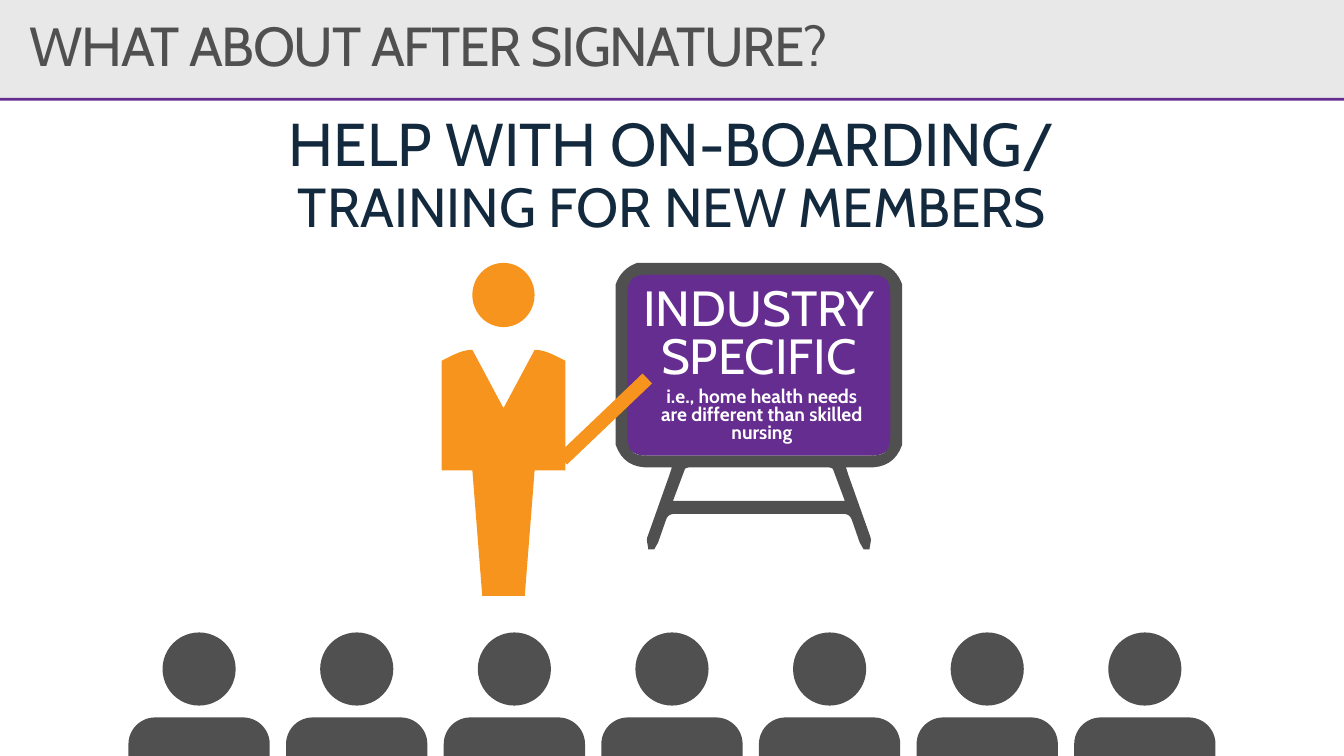
from dataclasses import dataclass
from typing import NamedTuple

from lxml import etree
from pptx import Presentation
from pptx.dml.color import RGBColor
from pptx.enum.shapes import MSO_CONNECTOR, MSO_SHAPE
from pptx.enum.text import MSO_ANCHOR, PP_ALIGN
from pptx.oxml.ns import qn
from pptx.util import Inches, Pt

RECTANGLE = MSO_SHAPE.RECTANGLE
ROUNDED = MSO_SHAPE.ROUNDED_RECTANGLE
SHOULDERS = MSO_SHAPE.ROUND_2_SAME_RECTANGLE
CIRCLE = MSO_SHAPE.OVAL
STRAIGHT = MSO_CONNECTOR.STRAIGHT
LEFT, CENTER = PP_ALIGN.LEFT, PP_ALIGN.CENTER
TOP, MIDDLE = MSO_ANCHOR.TOP, MSO_ANCHOR.MIDDLE

COLUMNS, ROWS = 136, 76.5
CELL = Inches(0.1)
TITLE_ONLY = 5


@dataclass(frozen=True)
class Theme:
    font: str = "Cabin"
    band: str = "E8E8E8"
    purple: str = "662D91"
    navy: str = "13293D"
    gray: str = "505050"
    orange: str = "F7941D"
    white: str = "FFFFFF"
    headline_size: int = 44
    title_size: int = 40
    board_size: int = 36
    note_size: int = 14
    pointer_width: int = 10


THEME = Theme()


class Area(NamedTuple):
    column: float
    row: float
    columns: float
    rows: float


class Point(NamedTuple):
    column: float
    row: float


class Curve(NamedTuple):
    first_control: Point
    second_control: Point
    end: Point


class Line(NamedTuple):
    text: str
    size: int


@dataclass(frozen=True)
class Audience:
    count: int = 7
    column: float = 13
    pitch: float = 15.95
    shoulder_row: float = 72.6
    shoulder_columns: float = 14.3
    shoulder_rows: float = 5.4
    head_row: float = 64
    head_size: float = 7.4


BOARD_AXIS = 76.8
BOARD_HALVES = [
    [
        Point(BOARD_AXIS, 26.6), Point(89.1, 26.6),
        Curve(Point(90.2, 27), Point(90.9, 27.7), Point(91.3, 28.8)),
        Point(91.3, 45),
        Curve(Point(90.7, 46.7), Point(89.5, 47.4), Point(87.7, 47.3)),
        Point(85.6, 47.3), Point(85.9, 48.2), Point(88.1, 54.4),
        Curve(Point(88.2, 54.8), Point(88, 55.2), Point(88, 55.6)),
        Point(87.4, 55.6), Point(87, 54.9), Point(86.2, 52.6),
        Curve(Point(86, 52.1), Point(85.7, 52), Point(85.2, 52)),
        Point(BOARD_AXIS, 52),
    ],
    [
        Point(BOARD_AXIS, 27.8), Point(88.1, 27.8),
        Curve(Point(89.6, 27.8), Point(90.1, 28.3), Point(90.1, 29.8)),
        Point(90.1, 44.1),
        Curve(Point(90.1, 45.6), Point(89.6, 46.1), Point(88.2, 46.1)),
        Point(BOARD_AXIS, 46.1),
    ],
    [
        Point(BOARD_AXIS, 47.3), Point(83.8, 47.3),
        Curve(Point(84, 47.3), Point(84.3, 47.4), Point(84.3, 47.5)),
        Point(85.5, 50.7), Point(BOARD_AXIS, 50.7),
    ],
]
TRAINER_AXIS = 50.95
TRAINER_HALVES = [[
    Point(TRAINER_AXIS, 41.3), Point(54.1, 35.4),
    Curve(Point(55.2, 35.4), Point(56.2, 36), Point(57.2, 36.5)),
    Point(57.2, 47.6), Point(54.1, 47.6), Point(53.1, 60.3), Point(TRAINER_AXIS, 60.3),
]]


def grid(length: float) -> int:
    return round(length * CELL)


def paint(shape, color: str) -> None:
    shape.shadow.inherit = False
    shape.fill.solid()
    shape.fill.fore_color.rgb = RGBColor.from_string(color)
    shape.line.fill.background()


def add_block(shapes, kind, area: Area, color: str, adjustments: tuple = ()) -> None:
    shape = shapes.add_shape(kind, *map(grid, area))
    for index, value in enumerate(adjustments):
        shape.adjustments[index] = value
    paint(shape, color)


def flatten(outline: list, steps: int = 8) -> list[Point]:
    points = []
    for part in outline:
        if isinstance(part, Point):
            points.append(part)
            continue
        start = points[-1]
        for step in range(1, steps + 1):
            t = step / steps
            weights = ((1 - t) ** 3, 3 * t * (1 - t) ** 2, 3 * t * t * (1 - t), t ** 3)
            corners = (start, *part)
            points.append(Point(
                sum(weight * corner.column for weight, corner in zip(weights, corners)),
                sum(weight * corner.row for weight, corner in zip(weights, corners)),
            ))
    return points


def add_symmetric(shapes, halves: list, axis: float, color: str) -> None:
    builder = None
    for half in halves:
        right = flatten(half)
        left = [Point(2 * axis - point.column, point.row) for point in reversed(right)]
        outline = [(grid(point.column), grid(point.row)) for point in right + left[1:-1]]
        if builder is None:
            builder = shapes.build_freeform(*outline[0])
        else:
            builder.move_to(*outline[0])
        builder.add_line_segments(outline[1:], close=True)
    paint(builder.convert_to_shape(), color)


def write_text(shape, lines: list[Line], *, color: str, spacing: float, align=CENTER,
               anchor=MIDDLE, wrap: bool = False, bold: bool = False, tracking: int = 0) -> None:
    frame = shape.text_frame
    frame.margin_left = frame.margin_right = frame.margin_top = frame.margin_bottom = 0
    frame.word_wrap = wrap
    frame.vertical_anchor = anchor
    paragraph = frame.paragraphs[0]
    paragraph.alignment = align
    paragraph.line_spacing = spacing
    for index, line in enumerate(lines):
        if index:
            paragraph.add_line_break()
        run = paragraph.add_run()
        run.text = line.text
        run.font.name = THEME.font
        run.font.size = Pt(line.size)
        run.font.bold = bold
        run.font.color.rgb = RGBColor.from_string(color)
    if tracking:
        for properties in shape.element.iter(qn("a:rPr")):
            properties.set("spc", str(tracking))


def add_text(shapes, area: Area, lines: list[Line], **text_format) -> None:
    write_text(shapes.add_textbox(*map(grid, area)), lines, **text_format)


def add_title(slide) -> None:
    add_block(slide.shapes, RECTANGLE, Area(0, 0, COLUMNS, 9.9), THEME.band)
    add_block(slide.shapes, RECTANGLE, Area(0, 9.9, COLUMNS, 0.3), THEME.purple)
    title = slide.shapes.title
    title.left, title.top, title.width, title.height = map(grid, Area(3, 0, 108.3, 9.9))
    write_text(title, [Line("WHAT ABOUT AFTER SIGNATURE?", THEME.title_size)],
               color=THEME.gray, spacing=0.9, align=LEFT, wrap=True, tracking=-100)
    title.element.getparent().append(title.element)


def add_board(slide) -> None:
    shapes = slide.shapes.add_group_shape().shapes
    add_block(shapes, ROUNDED, Area(62.9, 27.3, 27.8, 18.8), THEME.purple, (0.126,))
    add_symmetric(shapes, BOARD_HALVES, BOARD_AXIS, THEME.gray)
    add_text(shapes, Area(63.7, 31.7, 26.2, 4.7),
             [Line(word, THEME.board_size) for word in ("INDUSTRY", "SPECIFIC")],
             color=THEME.white, spacing=0.8)
    note = ("i.e., home health needs", "are different than skilled nursing")
    add_text(shapes, Area(64.8, 39.3, 24.6, 5.6), [Line(text, THEME.note_size) for text in note],
             color=THEME.white, spacing=0.8, anchor=TOP, wrap=True, bold=True)


def add_trainer(slide) -> None:
    shapes = slide.shapes.add_group_shape().shapes
    add_block(shapes, CIRCLE, Area(47.8, 26.6, 6.3, 6.5), THEME.orange)
    add_symmetric(shapes, TRAINER_HALVES, TRAINER_AXIS, THEME.orange)
    pointer = slide.shapes.add_connector(STRAIGHT, *map(grid, (56.9, 46.5, 65.5, 38.3)))
    pointer.line.color.rgb = RGBColor.from_string(THEME.orange)
    pointer.line.width = Pt(THEME.pointer_width)
    etree.SubElement(pointer.element.find(qn("p:spPr")), qn("a:effectLst"))


def add_audience(slide, audience: Audience) -> None:
    inset = (audience.shoulder_columns - audience.head_size) / 2
    for seat in range(audience.count):
        column = audience.column + seat * audience.pitch
        shapes = slide.shapes.add_group_shape().shapes
        add_block(shapes, SHOULDERS, Area(column, audience.shoulder_row, audience.shoulder_columns,
                                          audience.shoulder_rows), THEME.gray, (0.5, 0))
        add_block(shapes, CIRCLE, Area(column + inset, audience.head_row, audience.head_size,
                                       audience.head_size), THEME.gray)


def main() -> None:
    presentation = Presentation()
    presentation.slide_width, presentation.slide_height = grid(COLUMNS), grid(ROWS)
    slide = presentation.slides.add_slide(presentation.slide_layouts[TITLE_ONLY])
    add_title(slide)
    add_text(slide.shapes, Area(3, 14.3, 130, 7.2),
             [Line("HELP WITH ON-BOARDING/", THEME.headline_size),
              Line("TRAINING FOR NEW MEMBERS", THEME.title_size)],
             color=THEME.navy, spacing=0.9)
    add_board(slide)
    add_trainer(slide)
    add_audience(slide, Audience())
    presentation.save("out.pptx")


if __name__ == "__main__":
    main()
